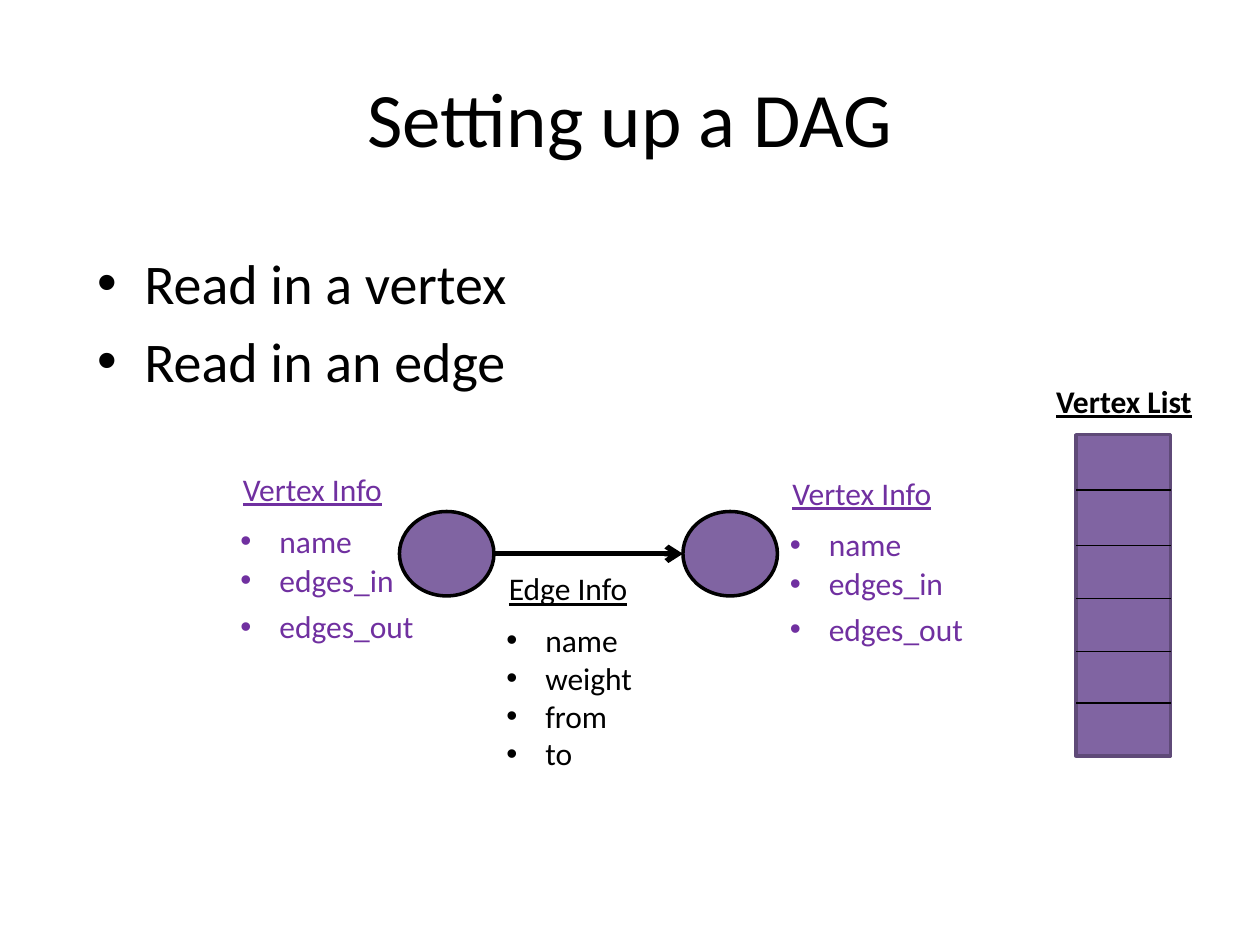
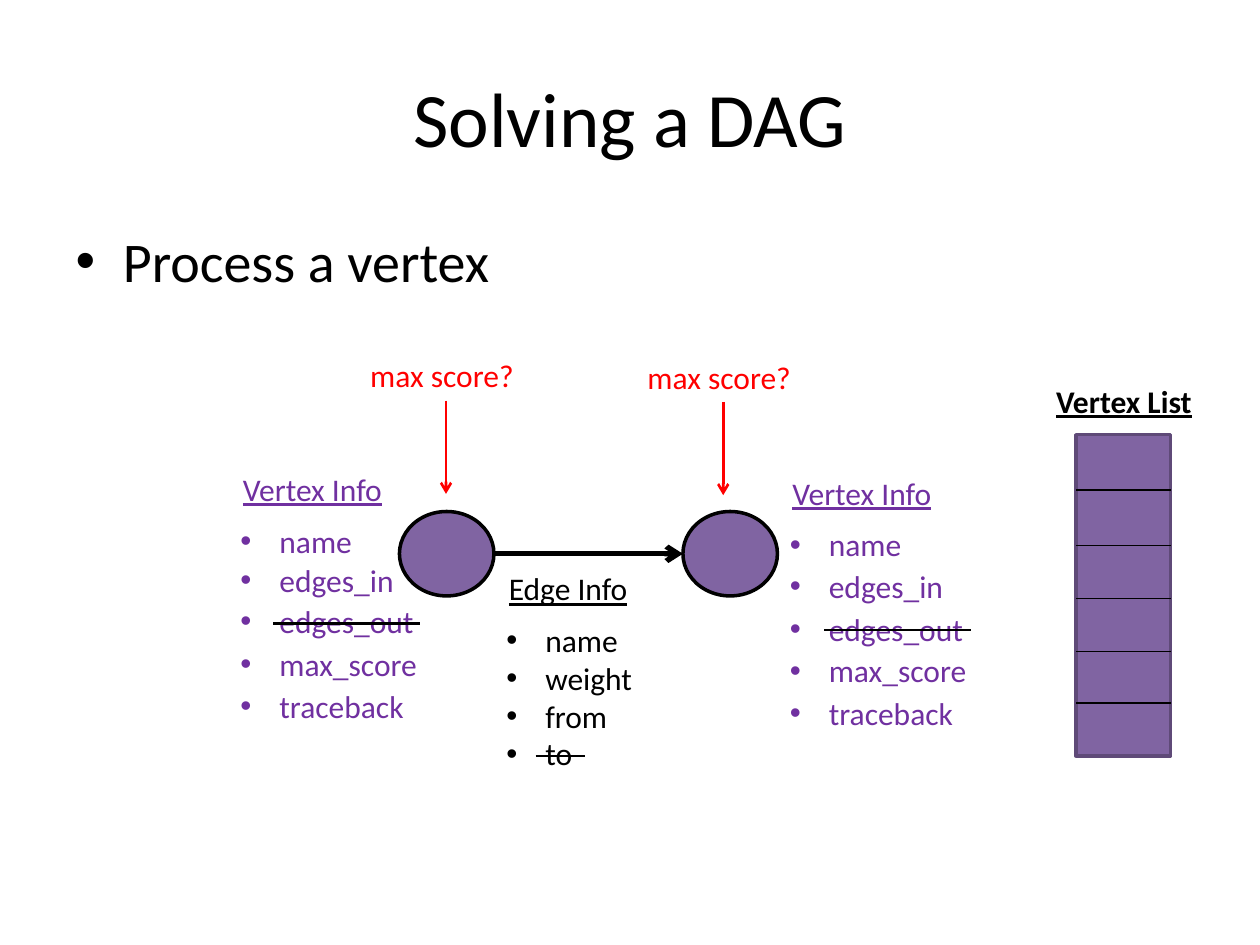
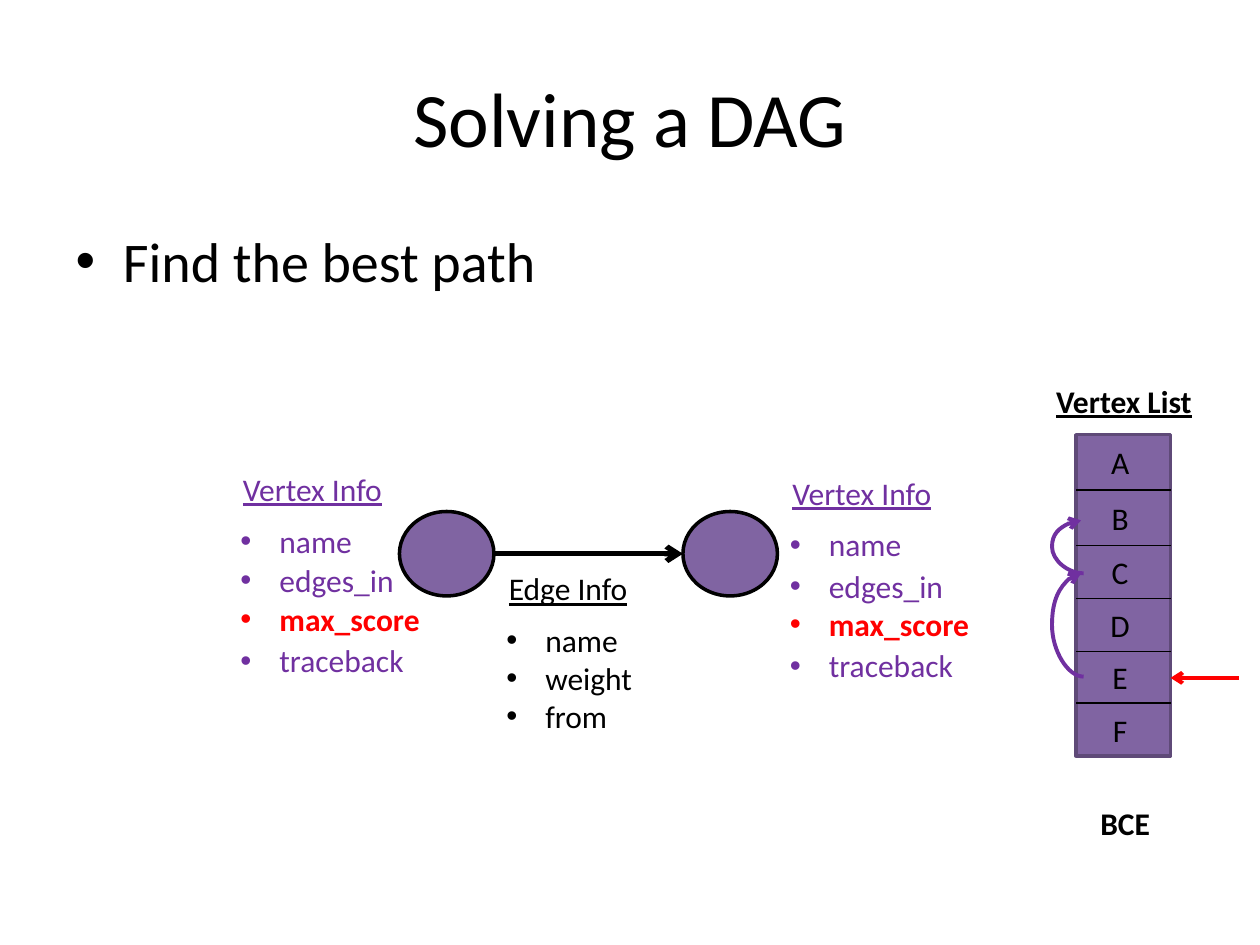
"""Build three slides on setting up and solving a DAG."""
from lxml.etree import SubElement
from pptx import Presentation
from pptx.dml.color import RGBColor
from pptx.enum.shapes import MSO_CONNECTOR, MSO_SHAPE
from pptx.enum.text import MSO_AUTO_SIZE, PP_ALIGN
from pptx.oxml.ns import qn
from pptx.util import Inches, Pt

COLORS = {"black": "000000", "vertex": "8064A2", "list_border": "5F4A78",
          "info": "7030A0", "accent": "FF0000"}
FONT = "Calibri"
LABEL_HEIGHT = 0.4

SLIDES = [
    {"title": "Setting up a DAG",
     "bullets": ["Read in a vertex", "Read in an edge"],
     "body": (0.67, 1.92, 4, 4.95),
     "fields": [("name", 4.09, 4.12), ("edges_in", 4.4, 4.43),
                ("edges_out", 4.77, 4.79)],
     "edge_fields": ["name", "weight", "from", "to"], "edge_height": 1.62},
    {"title": "Solving a DAG",
     "bullets": ["Process a vertex"],
     "body": (0.5, 1.75, 9, 4.95),
     "fields": [("name", 4.09, 4.12), ("edges_in", 4.4, 4.45),
                ("edges_out", 4.73, 4.79), ("max_score", 5.07, 5.12),
                ("traceback", 5.4, 5.46)],
     "edge_fields": ["name", "weight", "from", "to"], "edge_height": 1.62},
    {"title": "Solving a DAG",
     "bullets": ["Find the best path"],
     "body": (0.5, 1.75, 9, 4.95),
     "fields": [("name", 4.09, 4.12), ("edges_in", 4.4, 4.45),
                ("max_score", 4.71, 4.75), ("traceback", 5.04, 5.08)],
     "highlight": "max_score",
     "edge_fields": ["name", "weight", "from"], "edge_height": 1.01},
]
FIELD_WIDTHS = {"name": 1.2, "edges_in": 1.52}
LONG_FIELD_WIDTH = 1.73

VERTEX_LEFTS = (3.17, 5.42)
VERTEX_TOP, VERTEX_WIDTH, VERTEX_HEIGHT = 4.06, 0.75, 0.67
INFO_HEADINGS = ((1.83, 3.68), (6.19, 3.71))
FIELD_LEFTS = (1.81, 6.17)

LIST_LEFT, LIST_WIDTH = 8.54, 0.75
ROW_EDGES = (3.45, 3.89, 4.33, 4.75, 5.17, 5.58, 6)
LIST_NAMES = "ABCDEF"

SCORE_QUESTIONS = ((2.84, 2.78), (5.04, 2.79))
STRIKES = ((2.17, 3.33, 4.95), (6.54, 7.71, 5), (4.25, 4.64, 6))
TRACEBACKS = ((4.55, 5.37), (4.13, 4.55))


def rgb(color):
    return RGBColor.from_string(COLORS[color])


def style(paragraph, size, color, bold=None, underline=None):
    font = paragraph.font
    font.name, font.size = FONT, Pt(size)
    font.bold, font.underline = bold, underline
    font.color.rgb = rgb(color)


def add_text(slide, lines, left, top, width, height=LABEL_HEIGHT, color="black",
             bullet=False, align=PP_ALIGN.LEFT, **emphasis):
    box = slide.shapes.add_textbox(*map(Inches, (left, top, width, height)))
    frame = box.text_frame
    frame.word_wrap = True
    frame.auto_size = MSO_AUTO_SIZE.SHAPE_TO_FIT_TEXT
    frame.text = "\n".join(lines)
    for paragraph in frame.paragraphs:
        paragraph.alignment = align
        style(paragraph, 18, color, **emphasis)
        if bullet:
            properties = paragraph._p.get_or_add_pPr()
            properties.set("marL", str(Inches(0.31)))
            properties.set("indent", str(Inches(-0.31)))
            SubElement(properties, qn("a:buFont")).set("typeface", "Arial")
            SubElement(properties, qn("a:buChar")).set("char", "•")
            properties.append(properties.find(qn("a:defRPr")))


def add_line(slide, start, end, width, color="black", arrow=False,
             kind=MSO_CONNECTOR.STRAIGHT):
    line = slide.shapes.add_connector(kind, *map(Inches, start + end))
    line.line.color.rgb = rgb(color)
    line.line.width = Pt(width)
    if arrow:
        SubElement(line.line._get_or_add_ln(), qn("a:tailEnd")).set("type", "arrow")
    SubElement(line._element.spPr, qn("a:effectLst"))
    return line


def add_curve(slide, top, bottom):
    width, bulge = 0.02, 0.25
    curve = add_line(slide, (8.58, top), (8.58 + width, bottom), 2.25, "info",
                     True, MSO_CONNECTOR.CURVE)
    properties = curve._element.spPr
    properties.find(qn("a:xfrm")).set("rot", "10800000")
    geometry = properties.find(qn("a:prstGeom"))
    adjustments = geometry.find(qn("a:avLst"))
    if adjustments is None:
        adjustments = SubElement(geometry, qn("a:avLst"))
    guide = SubElement(adjustments, qn("a:gd"))
    guide.set("name", "adj1")
    guide.set("fmla", f"val {round(bulge / width * 100000)}")


def add_filled(slide, preset, left, top, width, height, border):
    shape = slide.shapes.add_shape(preset, *map(Inches, (left, top, width, height)))
    shape.shadow.inherit = False
    shape.fill.solid()
    shape.fill.fore_color.rgb = rgb("vertex")
    shape.line.color.rgb = rgb(border)
    shape.line.width = Pt(2)


def add_headings(slide, content):
    title, body = slide.shapes.title, slide.placeholders[1]
    places = ((title, (0.5, 0.3, 9, 1.25), [content["title"]], 44),
              (body, content["body"], content["bullets"], 32))
    for holder, place, lines, size in places:
        holder.left, holder.top, holder.width, holder.height = map(Inches, place)
        holder.text_frame.text = "\n".join(lines)
        for paragraph in holder.text_frame.paragraphs:
            style(paragraph, size, "black")


def add_vertices(slide, content):
    for left in VERTEX_LEFTS:
        add_filled(slide, MSO_SHAPE.OVAL, left, VERTEX_TOP, VERTEX_WIDTH,
                   VERTEX_HEIGHT, "black")
    for left, top in INFO_HEADINGS:
        add_text(slide, ["Vertex Info"], left, top, 1.5, color="info", underline=True)
    for field, *tops in content["fields"]:
        chosen = field == content.get("highlight")
        for left, top in zip(FIELD_LEFTS, tops):
            add_text(slide, [field], left, top,
                     FIELD_WIDTHS.get(field, LONG_FIELD_WIDTH), 0.71,
                     "accent" if chosen else "info", bullet=True,
                     bold=chosen or None)


def add_edge(slide, content):
    middle = VERTEX_TOP + VERTEX_HEIGHT / 2
    add_line(slide, (VERTEX_LEFTS[0] + VERTEX_WIDTH, middle),
             (VERTEX_LEFTS[1], middle), 3, arrow=True)
    add_text(slide, ["Edge Info"], 3.94, 4.47, 1.5, underline=True)
    add_text(slide, content["edge_fields"], 3.92, 4.88, 1.33,
             content["edge_height"], bullet=True)


def add_vertex_list(slide):
    add_text(slide, ["Vertex List"], 8.17, 2.98, 1.5, align=PP_ALIGN.CENTER,
             bold=True, underline=True)
    add_filled(slide, MSO_SHAPE.RECTANGLE, LIST_LEFT, ROW_EDGES[0], LIST_WIDTH,
               ROW_EDGES[-1] - ROW_EDGES[0], "list_border")
    for y in ROW_EDGES[1:-1]:
        add_line(slide, (LIST_LEFT, y), (LIST_LEFT + LIST_WIDTH, y), 0.75)


def add_scoring(slide):
    for left, top in SCORE_QUESTIONS:
        add_text(slide, ["max score?"], left, top, 1.5, color="accent")
        add_line(slide, (left + 0.7, top + 0.4), (left + 0.7, top + 1.14), 1.5,
                 "accent", arrow=True)
    for left, right, y in STRIKES:
        add_line(slide, (left, y), (right, y), 1.5)


def add_best_route(slide):
    for name, top, bottom in zip(LIST_NAMES, ROW_EDGES, ROW_EDGES[1:]):
        add_text(slide, [name], 8.58, (top + bottom - LABEL_HEIGHT) / 2, 0.62,
                 align=PP_ALIGN.CENTER)
    add_line(slide, (9.83, 5.38), (LIST_LEFT + LIST_WIDTH, 5.38), 2.25, "accent",
             arrow=True)
    for top, bottom in TRACEBACKS:
        add_curve(slide, top, bottom)
    add_text(slide, ["BCE"], 8.42, 6.33, 1.02, align=PP_ALIGN.CENTER, bold=True)


def main():
    deck = Presentation()
    deck.slide_width, deck.slide_height = Inches(10), Inches(7.5)
    for content in SLIDES:
        slide = deck.slides.add_slide(deck.slide_layouts[1])
        add_headings(slide, content)
        add_vertices(slide, content)
        add_vertex_list(slide)
        add_edge(slide, content)
    add_scoring(deck.slides[1])
    add_best_route(deck.slides[2])
    deck.save("out.pptx")


if __name__ == "__main__":
    main()
